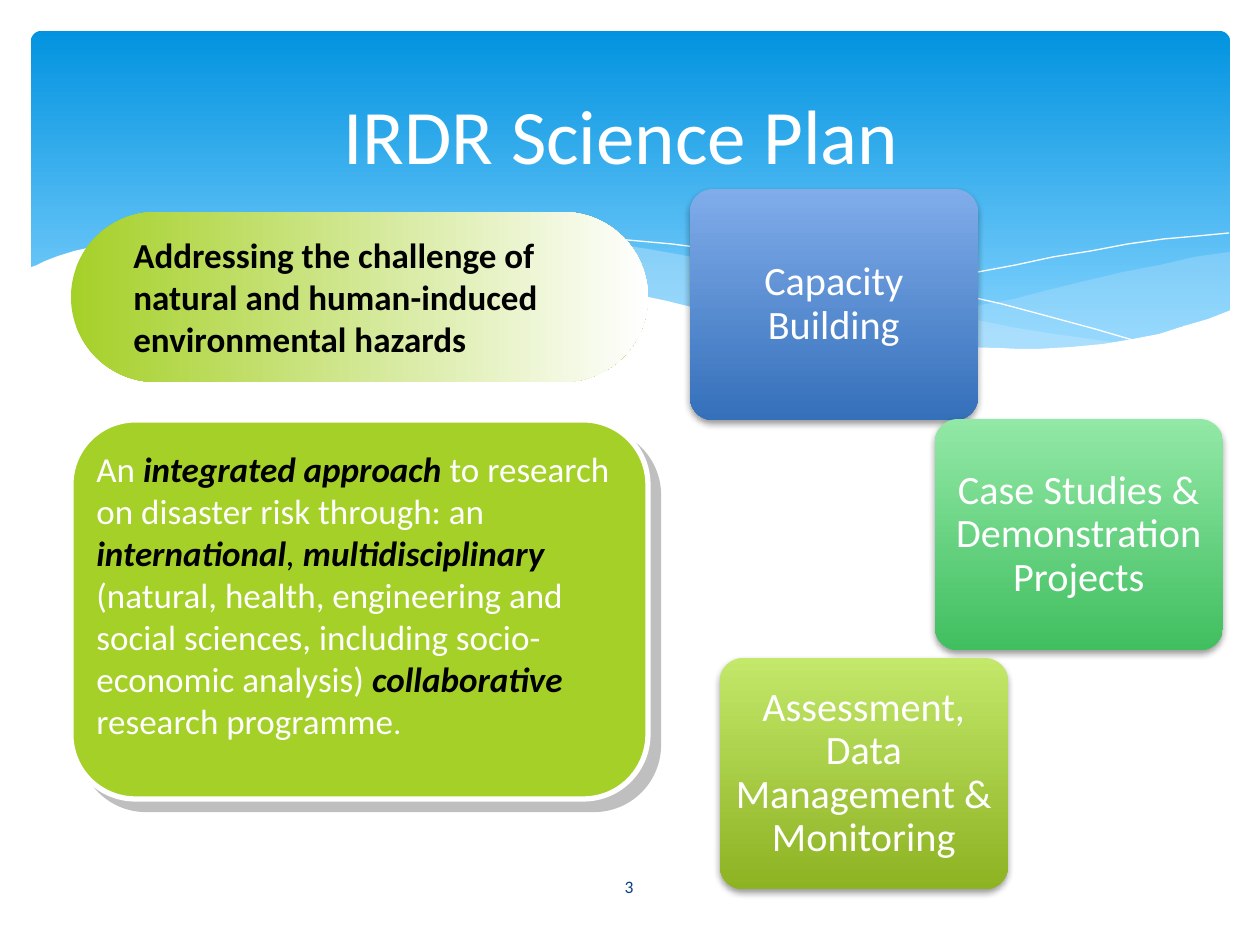
from lxml.etree import SubElement
from pptx import Presentation
from pptx.dml.color import RGBColor
from pptx.enum.shapes import MSO_SHAPE
from pptx.enum.text import MSO_ANCHOR, PP_ALIGN
from pptx.oxml.ns import qn
from pptx.util import Inches, Pt

PX = Inches(10) / 1260
FONT = "Calibri"
WHITE = RGBColor(0xFF, 0xFF, 0xFF)
BLACK = RGBColor(0, 0, 0)
GRAY = RGBColor(0x80, 0x80, 0x80)
NAVY = RGBColor(0x07, 0x3E, 0x87)
LIME = RGBColor(0xA5, 0xD0, 0x28)
MIST = RGBColor(0xC6, 0xE7, 0xFC)
SKY = (RGBColor(0x02, 0x93, 0xE0), RGBColor(0x83, 0xD3, 0xFE))
BLUES = (RGBColor(0x80, 0xAC, 0xEA), RGBColor(0x35, 0x70, 0xBA))
GREENS = (RGBColor(0x92, 0xE8, 0xA6), RGBColor(0x41, 0xBF, 0x60))
LIMES = (RGBColor(0xC3, 0xE8, 0x6A), RGBColor(0x8D, 0xB2, 0x22))

TITLE = "IRDR Science Plan "
PAGE = "3"
CHALLENGE = ["Addressing the challenge of", "natural and human-induced", "environmental hazards"]
PLAIN = {"color": WHITE}
STRONG = {"color": BLACK, "bold": True, "italic": True}
APPROACH = [
    ("An ", PLAIN),
    ("integrated approach ", STRONG),
    ("to research on disaster risk through: an ", PLAIN),
    ("international", STRONG),
    (", ", {"color": BLACK, "italic": True}),
    ("multidisciplinary ", STRONG),
    ("(natural, health, engineering and social sciences, including socio-economic analysis) ", PLAIN),
    ("collaborative ", STRONG),
    ("research programme", PLAIN),
    (".", {"color": WHITE, "size": 18}),
]
CARD_SIZE = (288, 231)
CARDS = [
    ("Capacity Building", (690, 189), BLUES),
    ("Case Studies & Demonstration Projects", (935, 419), GREENS),
    ("Assessment, Data Management & Monitoring", (720, 658), LIMES),
]

RIGHT_WAVE = [
    (1229, 252), (1194, 257), (1160, 265), (1123, 272), (1085, 281), (1048, 290), (1014, 299),
    (981, 305), (949, 312), (918, 319), (889, 324), (860, 330), (833, 334), (871, 339),
    (906, 343), (938, 346), (969, 349), (998, 349), (1026, 350), (1052, 349), (1076, 348),
    (1099, 345), (1120, 342), (1140, 339), (1160, 334), (1178, 330), (1196, 324), (1213, 318), (1230, 311),
    (1230, 252),
]
MIDDLE_WAVE = [
    (1125, 344), (1091, 339), (1055, 334), (1017, 328), (977, 320), (934, 311), (890, 302),
    (842, 291), (793, 280), (753, 270), (717, 262), (682, 255), (648, 249), (616, 244),
    (586, 241), (557, 238), (529, 236), (503, 234), (479, 233), (455, 233), (433, 234), (413, 236),
    (394, 237), (360, 241), (407, 247), (456, 256), (509, 266), (566, 280), (619, 292),
    (668, 302), (713, 312), (757, 321), (799, 329), (838, 335), (876, 340), (910, 345),
    (942, 348), (974, 349), (1003, 350), (1030, 350), (1056, 350), (1080, 349), (1104, 347),
]
FALLING_LINE = [
    (389, 246), (413, 242), (445, 238), (488, 236), (524, 236), (567, 237), (616, 239), (672, 244),
    (733, 252), (766, 257), (801, 262), (838, 268), (876, 276), (916, 285), (958, 294),
    (1002, 304), (1047, 316), (1095, 329), (1143, 343),
]
RISING_LINE = [
    (772, 324), (823, 310), (876, 296), (907, 289), (942, 281), (978, 272), (1016, 265),
    (1053, 257), (1091, 251), (1128, 244), (1164, 239), (1198, 236), (1229, 233),
]
FRONT_WAVE = [
    (1231, 310), (1208, 319), (1184, 326), (1159, 334), (1133, 339), (1103, 344), (1071, 347),
    (1037, 349), (1019, 349), (999, 348), (959, 347), (915, 343), (867, 338), (816, 330), (760, 320),
    (699, 309), (667, 301), (634, 294), (599, 286), (563, 277), (527, 268), (493, 261),
    (460, 255), (428, 248), (398, 244), (368, 239), (341, 237), (315, 234), (290, 233),
    (266, 232), (223, 232), (184, 233), (150, 236), (120, 241), (96, 246), (74, 251),
    (58, 256), (45, 261), (37, 265), (29, 268), (29, 415), (1231, 415),
]


def px(*lengths):
    return [round(length * PX) for length in lengths]


def blend(shape, colors, angle=270, last=1.0):
    shape.fill.gradient()
    shape.fill.gradient_angle = angle
    for stop, color, position in zip(shape.fill.gradient_stops, colors, (0, last)):
        stop.color.rgb = color
        stop.position = position


def paint(shape, color, opacity=100):
    shape.fill.solid()
    shape.fill.fore_color.rgb = color
    if opacity < 100:
        tint = shape._element.spPr.find(qn("a:solidFill"))[0]
        SubElement(tint, qn("a:alpha"), val=str(opacity * 1000))


def cast_shadow(shape, color, opacity, blur, distance, angle):
    effects = shape._element.spPr.find(qn("a:effectLst"))
    outer = SubElement(effects, qn("a:outerShdw"), blurRad=str(Pt(blur)), dist=str(Pt(distance)),
                       dir=str(angle * 60000), algn="ctr", rotWithShape="0")
    tint = SubElement(outer, qn("a:srgbClr"), val=str(color))
    SubElement(tint, qn("a:alpha"), val=str(opacity * 1000))


def add_rounded(slide, box, radius):
    shape = slide.shapes.add_shape(MSO_SHAPE.ROUNDED_RECTANGLE, *px(*box))
    shape.adjustments[0] = radius
    shape.line.fill.background()
    shape.shadow.inherit = False
    return shape


def add_wave(slide, points, color=None, opacity=100):
    builder = slide.shapes.build_freeform(*points[0], scale=PX)
    builder.add_line_segments(points[1:], close=color is not None)
    wave = builder.convert_to_shape()
    if color is None:
        wave.fill.background()
        wave.line.color.rgb = WHITE
        wave.line.width = 0
    else:
        paint(wave, color, opacity)
        wave.line.fill.background()
    wave.shadow.inherit = False


def write(frame, paragraphs, size, align=PP_ALIGN.LEFT, anchor=MSO_ANCHOR.TOP, spacing=None):
    frame.word_wrap = True
    frame.vertical_anchor = anchor
    for index, pieces in enumerate(paragraphs):
        paragraph = frame.add_paragraph() if index else frame.paragraphs[0]
        paragraph.alignment = align
        paragraph.line_spacing = spacing
        for text, style in pieces:
            run = paragraph.add_run()
            run.text = text
            run.font.name = FONT
            run.font.size = Pt(style.get("size", size))
            run.font.bold = style.get("bold", False)
            run.font.italic = style.get("italic", False)
            run.font.color.rgb = style["color"]


def add_text(slide, box, *content, **layout):
    write(slide.shapes.add_textbox(*px(*box)).text_frame, *content, **layout)


def main():
    deck = Presentation()
    deck.slide_width, deck.slide_height = px(1260, 945)
    slide = deck.slides.add_slide(deck.slide_layouts[6])
    centered = {"align": PP_ALIGN.CENTER, "anchor": MSO_ANCHOR.MIDDLE}

    banner = add_rounded(slide, (31, 31, 1199, 340), 0.03)
    blend(banner, SKY, last=0.9)
    add_wave(slide, RIGHT_WAVE, MIST, 29)
    add_wave(slide, MIDDLE_WAVE, MIST, 40)
    add_wave(slide, FALLING_LINE)
    add_wave(slide, RISING_LINE)
    add_wave(slide, FRONT_WAVE, WHITE)
    add_text(slide, (549, 862, 160, 50), [[(PAGE, {"color": NAVY})]], 10, **centered)

    approach_panel = add_rounded(slide, (71, 420, 577, 379), 0.17)
    paint(approach_panel, LIME)
    approach_panel.line.color.rgb = WHITE
    approach_panel.line.width = Pt(3)
    cast_shadow(approach_panel, GRAY, 50, 0, 8.5, 45)
    challenge_panel = add_rounded(slide, (71, 212, 577, 170), 0.5)
    blend(challenge_panel, (LIME, WHITE), angle=0)

    add_text(slide, (84, 441, 546, 318), [APPROACH], 20)
    bold = {"color": BLACK, "bold": True}
    add_text(slide, (121, 227, 478, 140), [[(line, bold)] for line in CHALLENGE], 20)
    add_text(slide, (63, 47, 1134, 173), [[(TITLE, PLAIN)]], 44, **centered)

    for label, corner, colors in CARDS:
        card = add_rounded(slide, corner + CARD_SIZE, 0.1)
        blend(card, colors)
        cast_shadow(card, BLACK, 38, 4, 2, 90)
        frame = card.text_frame
        frame.margin_left, frame.margin_top, frame.margin_right, frame.margin_bottom = px(6, 6, 6, 6)
        write(frame, [[(label, PLAIN)]], 23, spacing=0.9, **centered)

    deck.save("out.pptx")


if __name__ == "__main__":
    main()
